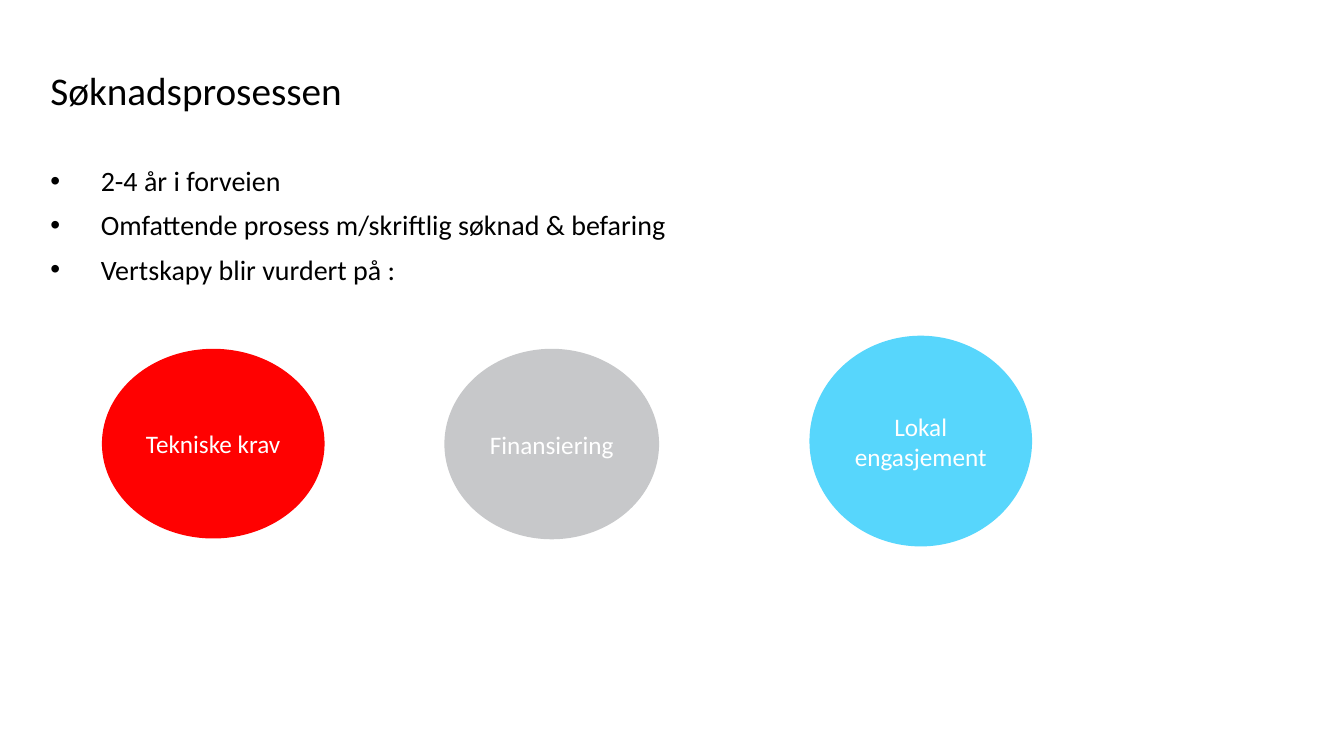
"""Build the slide about the application process and its three criteria."""
from dataclasses import dataclass

from lxml import etree
from pptx import Presentation
from pptx.dml.color import RGBColor
from pptx.enum.shapes import MSO_SHAPE
from pptx.enum.text import MSO_ANCHOR, PP_ALIGN
from pptx.oxml.ns import qn
from pptx.slide import Slide
from pptx.text.text import TextFrame, _Paragraph
from pptx.util import Cm, Pt

OVAL = MSO_SHAPE.OVAL
MIDDLE = MSO_ANCHOR.MIDDLE
CENTER = PP_ALIGN.CENTER

FONT = "Calibri"
COLORS = {
    "text": "000000",
    "light": "FFFFFF",
    "red": "FF0101",
    "grey": "C7C8CA",
    "blue": "57D6FC",
}
LEFT, WIDTH, INDENT = 1.27, 31.45, 1.27


@dataclass(frozen=True)
class Criterion:
    label: str
    color: str
    left: float
    top: float
    width: float
    height: float


BULLETS = [
    "2-4 år i forveien",
    "Omfattende prosess m/skriftlig søknad & befaring",
    "Vertskapy blir vurdert på :",
]
CRITERIA = [
    Criterion("Tekniske krav", "red", 2.57, 8.79, 5.61, 4.78),
    Criterion("Finansiering", "grey", 11.2, 8.79, 5.41, 4.8),
    Criterion("Lokal engasjement", "blue", 20.4, 8.46, 5.61, 5.31),
]


def color(name: str) -> RGBColor:
    return RGBColor.from_string(COLORS[name])


def add_run(p: _Paragraph, text: str, size: int, color_name: str) -> None:
    r = p.add_run()
    r.text = text
    r.font.name = FONT
    r.font.size = Pt(size)
    r.font.color.rgb = color(color_name)


def add_text_box(s: Slide, top: float, height: float) -> TextFrame:
    tf = s.shapes.add_textbox(Cm(LEFT), Cm(top), Cm(WIDTH), Cm(height)).text_frame
    tf.word_wrap = True
    tf.margin_left = tf.margin_top = tf.margin_right = tf.margin_bottom = 0
    return tf


def add_title(s: Slide, text: str) -> None:
    p = add_text_box(s, 1.8, 1.27).paragraphs[0]
    p.line_spacing = 0.9
    add_run(p, text, 28, "text")


def add_bullets(s: Slide, items: list[str]) -> None:
    tf = add_text_box(s, 4.22, 12.45)
    for i, item in enumerate(items):
        p = tf.add_paragraph() if i else tf.paragraphs[0]
        pPr = p._p.get_or_add_pPr()
        pPr.set("marL", str(Cm(INDENT)))
        pPr.set("indent", str(-Cm(INDENT)))
        etree.SubElement(pPr, qn("a:buFont"), typeface="Arial")
        etree.SubElement(pPr, qn("a:buChar"), char="•")
        p.line_spacing = 0.9
        p.space_before = Pt(10 if i else 0)
        add_run(p, item, 20, "text")


def add_criterion(s: Slide, c: Criterion) -> None:
    sp = s.shapes.add_shape(OVAL, Cm(c.left), Cm(c.top), Cm(c.width), Cm(c.height))
    sp.shadow.inherit = False
    sp.fill.solid()
    sp.fill.fore_color.rgb = color(c.color)
    sp.line.fill.background()
    tf = sp.text_frame
    tf.word_wrap = True
    tf.vertical_anchor = MIDDLE
    p = tf.paragraphs[0]
    p.alignment = CENTER
    add_run(p, c.label, 18, "light")


def main() -> None:
    prs = Presentation()
    prs.slide_width, prs.slide_height = Cm(33.87), Cm(19.05)
    s = prs.slides.add_slide(prs.slide_layouts[6])
    add_bullets(s, BULLETS)
    add_title(s, "Søknadsprosessen")
    for criterion in CRITERIA:
        add_criterion(s, criterion)
    prs.save("out.pptx")


if __name__ == "__main__":
    main()
